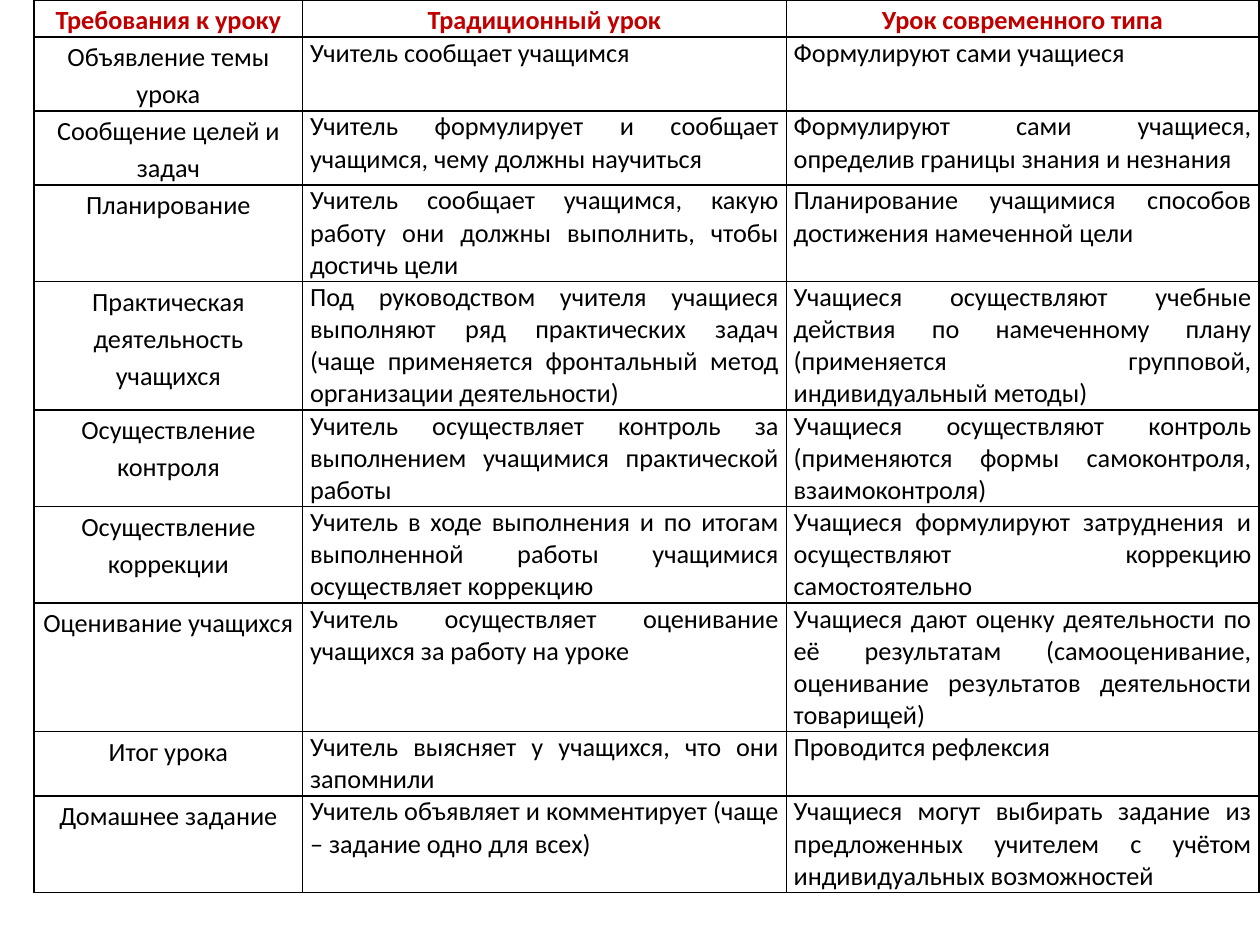
from dataclasses import dataclass

from lxml.etree import SubElement
from pptx import Presentation
from pptx.dml.color import RGBColor
from pptx.enum.text import PP_ALIGN as Align
from pptx.oxml.ns import qn
from pptx.util import Cm, Pt

HEADINGS = ("Требования к уроку", "Традиционный урок", "Урок современного типа")
REQUIREMENTS = [
    ("Объявление темы урока",
     "Учитель сообщает учащимся",
     "Формулируют сами учащиеся "),
    ("Сообщение целей и задач",
     "Учитель формулирует и сообщает учащимся, чему должны научиться",
     "Формулируют сами учащиеся, определив границы знания и незнания"),
    ("Планирование",
     "Учитель сообщает учащимся, какую работу они должны выполнить, чтобы достичь цели",
     "Планирование учащимися способов достижения намеченной цели"),
    ("Практическая деятельность учащихся",
     "Под руководством учителя учащиеся выполняют ряд практических задач "
     "(чаще применяется фронтальный метод организации деятельности)",
     "Учащиеся осуществляют учебные действия по намеченному плану "
     "(применяется групповой, индивидуальный методы)"),
    ("Осуществление контроля",
     "Учитель осуществляет контроль за выполнением учащимися практической работы",
     "Учащиеся осуществляют контроль (применяются формы самоконтроля, взаимоконтроля)"),
    ("Осуществление коррекции",
     "Учитель в ходе выполнения и по итогам выполненной работы учащимися "
     "осуществляет коррекцию",
     "Учащиеся формулируют затруднения и осуществляют коррекцию самостоятельно"),
    ("Оценивание учащихся",
     "Учитель осуществляет оценивание учащихся за работу на уроке",
     "Учащиеся дают оценку деятельности по её результатам "
     "(самооценивание, оценивание результатов деятельности товарищей)"),
    ("Итог урока",
     "Учитель выясняет у учащихся, что они запомнили",
     "Проводится рефлексия"),
    ("Домашнее задание",
     "Учитель объявляет и комментирует (чаще – задание одно для всех)",
     "Учащиеся могут выбирать задание из предложенных учителем "
     "с учётом индивидуальных возможностей"),
]
COLUMN_WIDTHS = (5.41, 9.75, 9.53)
ROW_HEIGHTS = (0.58, 1.19, 1.19, 1.6, 2.39, 1.6, 1.78, 2.39, 1.07, 1.78)


@dataclass(frozen=True)
class Theme:
    font: str = "Calibri"
    size: float = 15
    heading: str = "C00000"
    text: str = "000000"
    border: str = "000000"
    border_width: float = 1
    inset: float = 0.15
    space_after: float = 10
    label_spacing: float = 1.15


class LessonSlide:
    """Draws comparison tables on one slide in one theme."""

    def __init__(self, slide, theme):
        self.slide = slide
        self.theme = theme

    def comparison(self, left, top, width, height, lines):
        frame = self.slide.shapes.add_table(
            len(lines), len(COLUMN_WIDTHS), Cm(left), Cm(top), Cm(width), Cm(height))
        table = frame.table
        table.horz_banding = False
        for column, column_width in zip(table.columns, COLUMN_WIDTHS):
            column.width = Cm(column_width)
        for row, row_height, texts in zip(table.rows, ROW_HEIGHTS, lines):
            row.height = Cm(row_height)
            is_heading = texts is HEADINGS
            for position, (cell, text) in enumerate(zip(row.cells, texts)):
                self.cell(cell, text, is_heading, is_heading or position == 0)
        frame.width, frame.height = Cm(width), Cm(height)

    def cell(self, cell, text, is_heading, is_label):
        theme = self.theme
        cell.margin_left = cell.margin_right = Cm(theme.inset)
        cell.margin_top = cell.margin_bottom = 0
        cell.text = text
        paragraph = cell.text_frame.paragraphs[0]
        paragraph.alignment = Align.CENTER if is_label else Align.JUSTIFY
        paragraph.space_after = Pt(theme.space_after)
        if is_label:
            paragraph.line_spacing = theme.label_spacing
        font = paragraph.font
        font.name, font.size, font.bold = theme.font, Pt(theme.size), is_heading
        font.color.rgb = RGBColor.from_string(theme.heading if is_heading else theme.text)
        self.borders(cell)
        cell.fill.background()

    def borders(self, cell):
        properties = cell._tc.get_or_add_tcPr()
        for side in ("lnL", "lnR", "lnT", "lnB"):
            border = SubElement(properties, qn(f"a:{side}"), w=str(Pt(self.theme.border_width)))
            fill = SubElement(border, qn("a:solidFill"))
            SubElement(fill, qn("a:srgbClr"), val=self.theme.border)


def main():
    presentation = Presentation()
    presentation.slide_width, presentation.slide_height = Cm(25.4), Cm(19.05)
    blank_layout = presentation.slide_layouts[6]
    lesson = LessonSlide(presentation.slides.add_slide(blank_layout), Theme())
    lesson.comparison(0.69, 0, 24.71, 17.63, [HEADINGS, *REQUIREMENTS])
    presentation.save("out.pptx")


if __name__ == "__main__":
    main()
